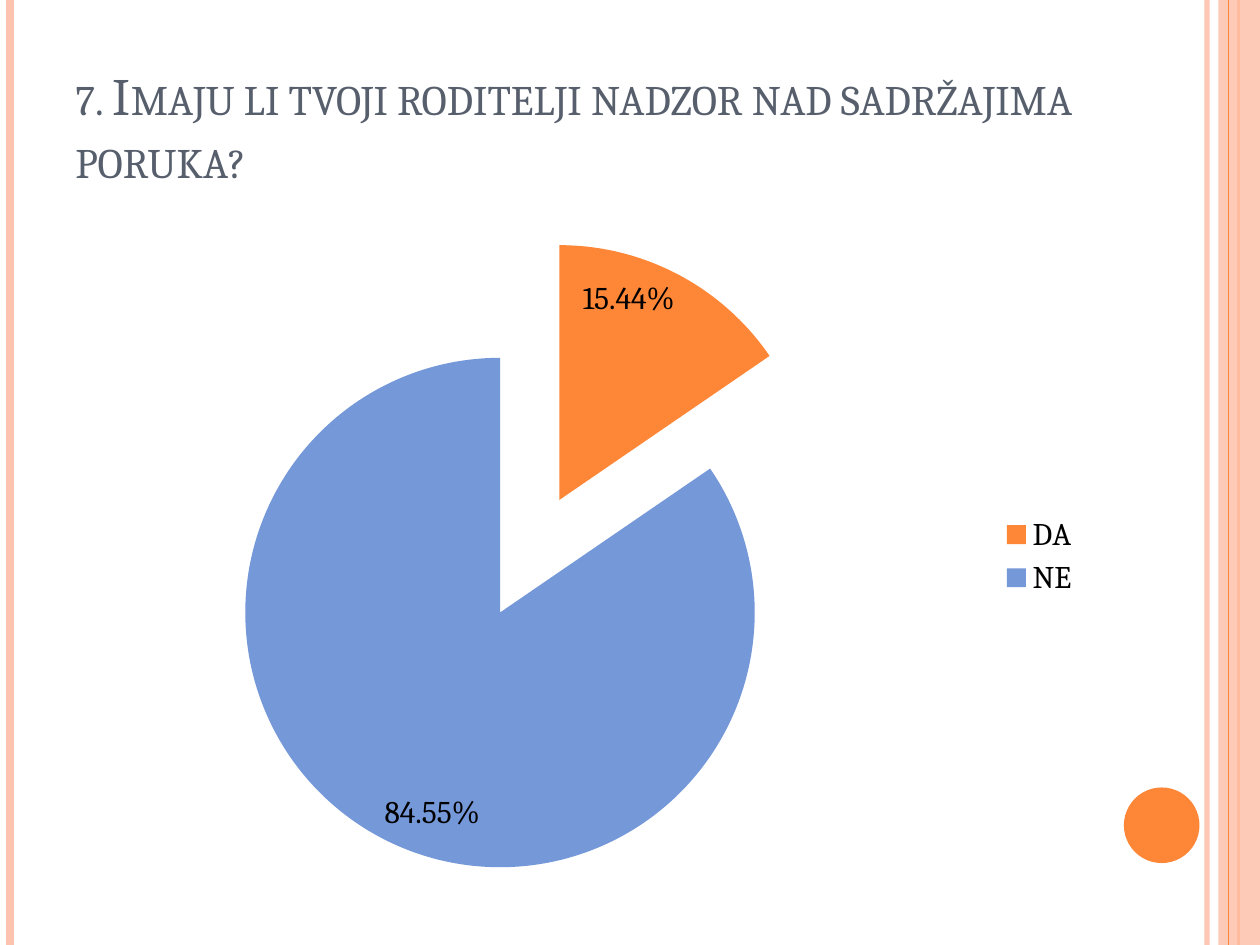
from lxml import etree
from pptx import Presentation
from pptx.chart.data import CategoryChartData
from pptx.dml.color import RGBColor
from pptx.enum.chart import XL_CHART_TYPE, XL_LABEL_POSITION, XL_LEGEND_POSITION
from pptx.enum.shapes import MSO_CONNECTOR, MSO_SHAPE
from pptx.enum.text import MSO_ANCHOR
from pptx.oxml.ns import qn
from pptx.util import Inches, Pt

WIDTH, HEIGHT = 10, 7.5
PIE = XL_CHART_TYPE.PIE
INSIDE_END = XL_LABEL_POSITION.INSIDE_END
LEGEND_RIGHT = XL_LEGEND_POSITION.RIGHT
STRAIGHT = MSO_CONNECTOR.STRAIGHT
RECTANGLE, OVAL = MSO_SHAPE.RECTANGLE, MSO_SHAPE.OVAL
BOTTOM = MSO_ANCHOR.BOTTOM

ORANGE, PEACH, BLUE = "FE8637", "FEC3AE", "7598D9"
SLATE, BLACK = "575F6D", "000000"


def rgb(value):
    return RGBColor.from_string(value)


def apply(target, formats):
    for name, value in formats.items():
        setattr(target, name, value)


def set_alpha(fill_parent, percent):
    """Make the solid colour below fill_parent partly transparent."""
    colour = fill_parent.find(".//" + qn("a:srgbClr"))
    etree.SubElement(colour, qn("a:alpha"), val=str(percent * 1000))


class SlideBuilder:
    """Draws on one slide; lengths are inches on the 10 by 7.5 page."""

    def __init__(self, slide, font):
        self.slide = slide
        self.font = font

    def style_font(self, font, size, colour):
        apply(font, {"name": self.font, "size": Pt(size), "bold": False})
        font.color.rgb = rgb(colour)

    def stripe(self, x, colour, weight, alpha=100):
        """Draw a vertical line over the full height of the slide."""
        line = self.slide.shapes.add_connector(
            STRAIGHT, Inches(x), 0, Inches(x), Inches(HEIGHT))
        line.line.color.rgb = rgb(colour)
        line.line.width = Pt(weight)
        properties = line._element.spPr
        if alpha < 100:
            set_alpha(properties, alpha)
        etree.SubElement(properties, qn("a:effectLst"))

    def shape(self, kind, box, colour, alpha=100):
        shape = self.slide.shapes.add_shape(kind, *map(Inches, box))
        shape.shadow.inherit = False
        shape.fill.solid()
        shape.fill.fore_color.rgb = rgb(colour)
        shape.line.fill.background()
        if alpha < 100:
            set_alpha(shape._element.spPr, alpha)

    def title(self, text, box, size, colour):
        frame = self.slide.shapes.add_textbox(*map(Inches, box)).text_frame
        apply(frame, {"word_wrap": True, "vertical_anchor": BOTTOM})
        run = frame.paragraphs[0].add_run()
        run.text = text
        self.style_font(run.font, size, colour)
        run._r.get_or_add_rPr().set("cap", "small")

    def pie(self, box, answers, colours, size, explosion):
        data = CategoryChartData(number_format="0.00%")
        data.categories = list(answers)
        data.add_series("Series 1", list(answers.values()))
        chart = self.slide.shapes.add_chart(PIE, *map(Inches, box), data).chart
        apply(chart, {"has_title": False, "has_legend": True})
        apply(chart.legend, {"position": LEGEND_RIGHT, "include_in_layout": False})
        self.style_font(chart.font, size, BLACK)

        plot = chart.plots[0]
        apply(plot, {"vary_by_categories": True, "has_data_labels": True})
        apply(plot.data_labels, {
            "show_value": True, "show_percentage": False,
            "number_format": "0.00%", "number_format_is_linked": False,
            "position": INSIDE_END})
        self.style_font(plot.data_labels.font, size, BLACK)

        series = plot.series[0]
        for index, colour in enumerate(colours):
            fill = series.points[index].format.fill
            fill.solid()
            fill.fore_color.rgb = rgb(colour)
        exploded = etree.Element(qn("c:explosion"), val=str(explosion))
        series._element.find(qn("c:dPt")).addprevious(exploded)


def main():
    presentation = Presentation()
    apply(presentation, {"slide_width": Inches(WIDTH),
                         "slide_height": Inches(HEIGHT)})
    slide = presentation.slides.add_slide(presentation.slide_layouts[6])
    builder = SlideBuilder(slide, "Cambria")

    band_left = 9.67
    builder.stripe(9.58, PEACH, 3, alpha=93)
    builder.stripe(0.08, PEACH, 4.5)
    builder.stripe(9.83, ORANGE, 1.5)
    builder.shape(RECTANGLE, (band_left, 0, WIDTH - band_left, HEIGHT), PEACH, alpha=87)
    builder.stripe(9.75, ORANGE, 0.75)
    builder.shape(OVAL, (8.92, 6.25, 0.6, 0.6), ORANGE)

    left, content_width = 0.5, 8.17
    builder.title("7. Imaju li tvoji roditelji nadzor nad sadržajima poruka?",
                  (left, 0.3, content_width, 1.25), 30, SLATE)
    builder.pie((left, 1.75, content_width, 5.33),
                {"DA": 0.1544, "NE": 0.8455}, (ORANGE, BLUE), 18, 25)
    presentation.save("out.pptx")


if __name__ == "__main__":
    main()
